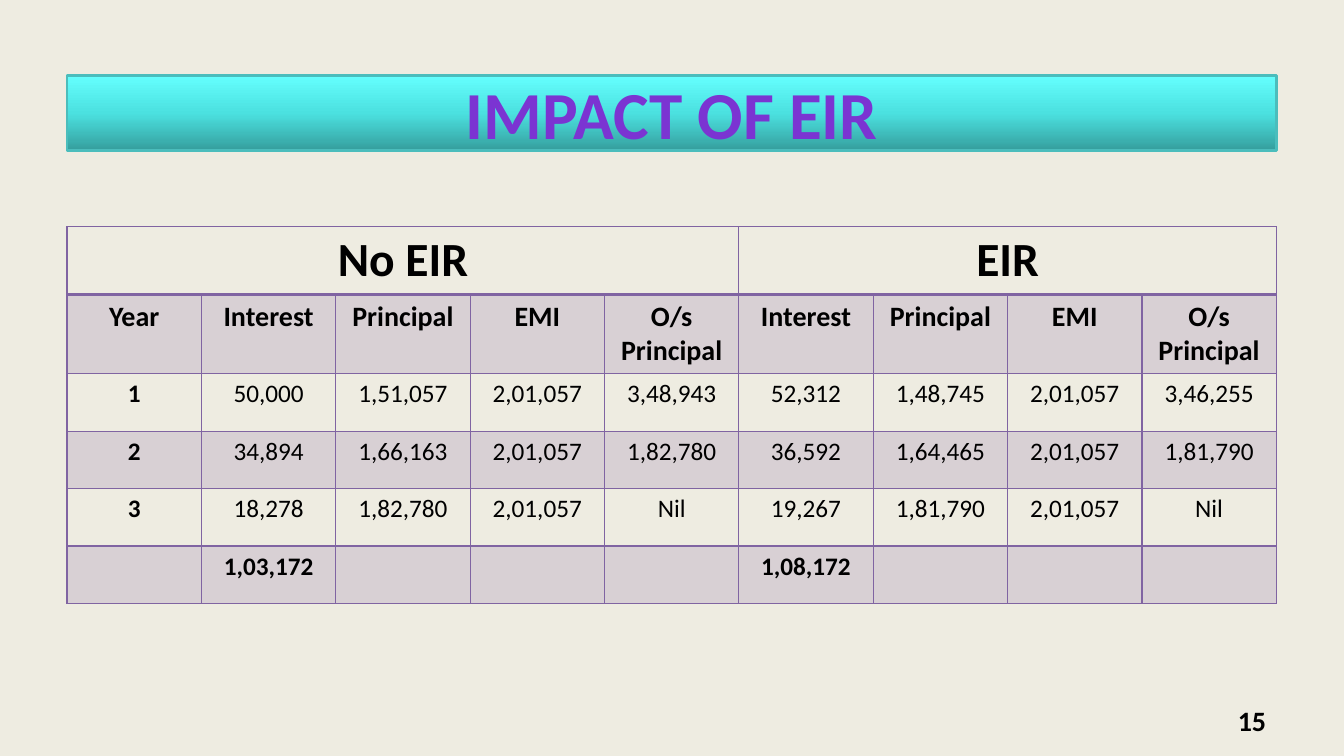
from lxml.etree import SubElement
from pptx import Presentation
from pptx.dml.color import RGBColor
from pptx.enum.shapes import MSO_SHAPE
from pptx.enum.text import MSO_ANCHOR, PP_ALIGN
from pptx.oxml import parse_xml
from pptx.oxml.ns import nsdecls, qn
from pptx.util import Cm, Pt

PURPLE = "8064A2"
COLUMNS = ["Interest", "Principal", "EMI", "O/s Principal"]
ROWS = [
    ["Year"] + COLUMNS * 2,
    ["1", "50,000", "1,51,057", "2,01,057", "3,48,943",
     "52,312", "1,48,745", "2,01,057", "3,46,255"],
    ["2", "34,894", "1,66,163", "2,01,057", "1,82,780",
     "36,592", "1,64,465", "2,01,057", "1,81,790"],
    ["3", "18,278", "1,82,780", "2,01,057", "Nil",
     "19,267", "1,81,790", "2,01,057", "Nil"],
    ["", "1,03,172", "", "", "", "1,08,172", "", "", ""],
]
ROW_HEIGHTS = [1.7, 1.96, 1.46, 1.45, 1.44, 1.45]


def rgb(value):
    """Turn a hex string into a colour."""
    return RGBColor.from_string(value)


def write(tf, text, size=18, color="000000", bold=False, align=PP_ALIGN.CENTER):
    """Write one formatted paragraph into a text frame."""
    p = tf.paragraphs[0]
    p.alignment = align
    r = p.add_run()
    r.text = text
    r.font.name = "Calibri"
    r.font.size = Pt(size)
    r.font.bold = bold
    r.font.color.rgb = rgb(color)


def fill_gradient(sp, stops, angle):
    """Fill a shape with a linear gradient of position and colour stops."""
    sp.fill.gradient()
    grad = sp._element.spPr.find(qn("a:gradFill"))
    gs = "".join(f'<a:gs pos="{pos * 1000}"><a:srgbClr val="{color}"/></a:gs>'
                 for pos, color in stops)
    grad.getparent().replace(grad, parse_xml(
        f'<a:gradFill {nsdecls("a")} rotWithShape="1"><a:gsLst>{gs}</a:gsLst>'
        f'<a:lin ang="{angle * 60000}" scaled="0"/></a:gradFill>'))


def style_cell(cell, banded, top, bottom):
    """Set a cell's borders and its translucent band."""
    tcPr = cell._tc.get_or_add_tcPr()
    for side, width in (("L", 1), ("R", 1), ("T", top), ("B", bottom)):
        ln = SubElement(tcPr, qn(f"a:ln{side}"), w=str(Pt(width)))
        SubElement(SubElement(ln, qn("a:solidFill")), qn("a:srgbClr"), val=PURPLE)
    if banded:
        cell.fill.solid()
        cell.fill.fore_color.rgb = rgb(PURPLE)
        color = tcPr.find(qn("a:solidFill")).find(qn("a:srgbClr"))
        SubElement(color, qn("a:alpha"), val="20000")
    else:
        cell.fill.background()


def add_title(s, left, top, width, height):
    """Draw the gradient title bar."""
    sp = s.shapes.add_shape(MSO_SHAPE.RECTANGLE, Cm(left), Cm(top), Cm(width), Cm(height))
    sp.shadow.inherit = False
    fill_gradient(sp, [(0, "359E9D"), (50, "4BE1E0"), (100, "65FFFE")], 270)
    sp.line.color.rgb = rgb("4BBDBC")
    sp.line.width = Pt(2)
    tf = sp.text_frame
    tf.word_wrap = True
    tf.vertical_anchor = MSO_ANCHOR.MIDDLE
    write(tf, "IMPACT OF EIR", size=48, color="7B34D2", bold=True)


def add_comparison(s, left, top, width):
    """Draw the table that compares loans with and without EIR."""
    count = len(ROWS[0])
    table = s.shapes.add_table(len(ROW_HEIGHTS), count, Cm(left), Cm(top),
                               Cm(width), Cm(sum(ROW_HEIGHTS))).table
    table.first_row = table.horz_banding = False
    for column in table.columns:
        column.width = Cm(width / count)
    for i, (row, height) in enumerate(zip(table.rows, ROW_HEIGHTS)):
        row.height = Cm(height)
        for cell in row.cells:
            style_cell(cell, i % 2 == 1, 2 if i == 1 else 1, 2 if i == 0 else 1)
    for text, first, last in (("No EIR", 0, 4), ("EIR", 5, 8)):
        cell = table.cell(0, first)
        cell.merge(table.cell(0, last))
        write(cell.text_frame, text, size=34, bold=True)
    for i, values in enumerate(ROWS, 1):
        for j, text in enumerate(values):
            if text:
                write(table.cell(i, j).text_frame, text, size=20 if i == 1 else 18,
                      bold=i in (1, len(ROWS)) or j == 0)


def add_page_number(s, left, top, width, height):
    """Write the page number at the right of its box."""
    tf = s.shapes.add_textbox(Cm(left), Cm(top), Cm(width), Cm(height)).text_frame
    tf.word_wrap = True
    tf.vertical_anchor = MSO_ANCHOR.MIDDLE
    write(tf, "15", size=20, bold=True, align=PP_ALIGN.RIGHT)


def main():
    """Build and save the slide."""
    prs = Presentation()
    prs.slide_width, prs.slide_height = Cm(33.87), Cm(19.05)
    s = prs.slides.add_slide(prs.slide_layouts[6])
    s.background.fill.solid()
    s.background.fill.fore_color.rgb = rgb("EEECE1")
    add_title(s, 1.69, 1.9, 30.48, 1.9)
    add_comparison(s, 1.69, 5.71, 30.48)
    add_page_number(s, 24.26, 17.65, 7.9, 1.02)
    prs.save("out.pptx")


if __name__ == "__main__":
    main()
